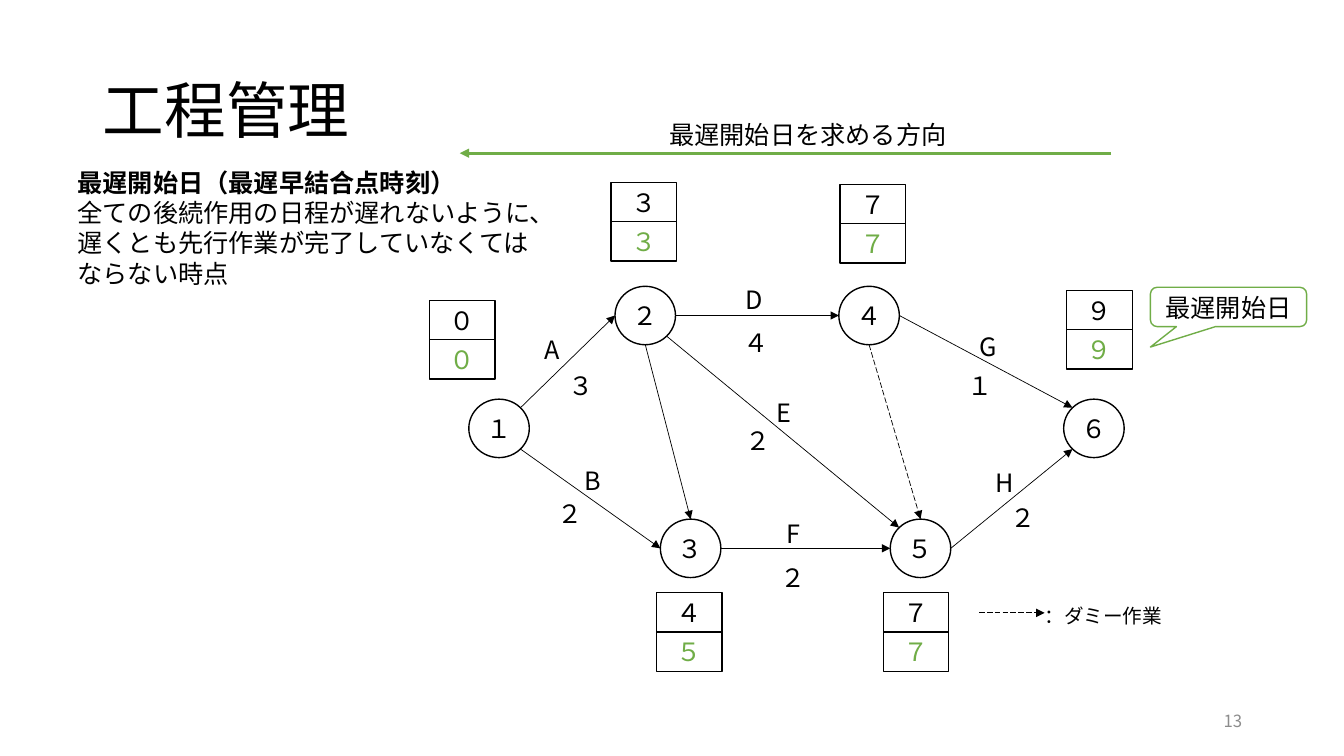
from lxml.etree import SubElement
from pptx import Presentation
from pptx.dml.color import RGBColor
from pptx.enum.dml import MSO_LINE
from pptx.enum.shapes import MSO_CONNECTOR, MSO_SHAPE
from pptx.enum.text import MSO_ANCHOR, PP_ALIGN
from pptx.oxml.ns import qn
from pptx.util import Pt

PX = 9144  # 100 px to the inch
THEME = {
    "black": RGBColor(0x00, 0x00, 0x00), "green": RGBColor(0x70, 0xAD, 0x47),
    "grey": RGBColor(0x8C, 0x8C, 0x8C),
    "font": "Noto Sans CJK JP", "latin": "Arial",
    "title": 44, "text": 18, "legend": 14, "number": 12,
}

prs = Presentation()
prs.slide_width, prs.slide_height = 1333 * PX, 750 * PX
s = prs.slides.add_slide(prs.slide_layouts[5])


def write(sp, text, size="text", color="black", align=PP_ALIGN.LEFT,
          anchor=MSO_ANCHOR.TOP, font="font"):
    tf = sp.text_frame
    tf.text = text
    tf.word_wrap = True
    tf.vertical_anchor = anchor
    for p in tf.paragraphs:
        p.alignment = align
        for r in p.runs:
            r.font.size = Pt(THEME[size])
            r.font.color.rgb = THEME[color]
            r.font.name = THEME[font]
            SubElement(r._r.get_or_add_rPr(), qn("a:ea"), typeface=THEME["font"])
    return tf


def arrow(start, end, color="black", width=0.5, dashed=False):
    c = s.shapes.add_connector(MSO_CONNECTOR.STRAIGHT,
                               *(round(v * PX) for v in (*start, *end)))
    c.line.color.rgb = THEME[color]
    c.line.width = Pt(width)
    if dashed:
        c.line.dash_style = MSO_LINE.LONG_DASH
    SubElement(c.line._get_or_add_ln(), qn("a:tailEnd"), type="triangle")
    SubElement(c._element.spPr, qn("a:effectLst"))
    return c


# Title
title = s.shapes.title
title.left, title.top, title.width, title.height = (v * PX for v in (92, 40, 1150, 145))
tf = write(title, "工程管理", "title", anchor=MSO_ANCHOR.MIDDLE)
tf.paragraphs[0].line_spacing = 0.9

# Explanation
sp = s.shapes.add_textbox(67 * PX, 161 * PX, 1199 * PX, 192 * PX)
tf = write(sp, "最遅開始日（最遅早結合点時刻）\n全ての後続作用の日程が遅れないように、\n"
               "遅くとも先行作業が完了していなくては\nならない時点", font="latin")
tf.paragraphs[0].runs[0].font.bold = True

# Slide number
sp = s.shapes.add_textbox(942 * PX, 695 * PX, 300 * PX, 40 * PX)
write(sp, "13", "number", "grey", PP_ALIGN.RIGHT, MSO_ANCHOR.MIDDLE)

# Outlined shapes: nodes, two-row day boxes and the callout
NODE_W, NODE_H, BOX_W, BOX_H = 60, 58, 65, 39
nodes = {"１": (465, 396), "２": (610, 284), "３": (655, 515),
         "４": (832, 284), "５": (883, 515), "６": (1055, 396)}
days = [(606, 181, "３", "３"), (426, 298, "０", "０"), (651, 588, "４", "５"),
        (876, 588, "７", "７"), (833, 183, "７", "７"), (1058, 288, "９", "９")]
outlined = [(MSO_SHAPE.FLOWCHART_CONNECTOR, x, y, NODE_W, NODE_H, name, "black", "black")
            for name, (x, y) in nodes.items()]
for x, y, earliest, latest in days:
    outlined += [(MSO_SHAPE.RECTANGLE, x, y, BOX_W, BOX_H, earliest, "black", "black"),
                 (MSO_SHAPE.RECTANGLE, x, y + BOX_H, BOX_W, BOX_H, latest, "green", "black")]
outlined.append((MSO_SHAPE.ROUNDED_RECTANGULAR_CALLOUT, 1141, 285, 155, 39,
                 "最遅開始日", "black", "green"))
node_shapes = {}
for kind, x, y, w, h, text, color, line in outlined:
    sp = s.shapes.add_shape(kind, x * PX, y * PX, w * PX, h * PX)
    sp.shadow.inherit = False
    sp.fill.background()
    sp.line.color.rgb = THEME[line]
    sp.line.width = Pt(1)
    tf = write(sp, text, "text", color, PP_ALIGN.CENTER, MSO_ANCHOR.MIDDLE)
    tf.margin_left = tf.margin_right = tf.margin_top = tf.margin_bottom = 0
    if kind == MSO_SHAPE.FLOWCHART_CONNECTOR:
        node_shapes[text] = sp
    elif kind == MSO_SHAPE.ROUNDED_RECTANGULAR_CALLOUT:
        for i, value in enumerate((-0.5, 1.02, 0.17)):
            sp.adjustments[i] = value

# Activities between points on the node outlines
DIAG = 0.71
sides = {"top": (0, -1), "bottom": (0, 1), "left": (-1, 0), "right": (1, 0),
         "upper left": (-DIAG, -DIAG), "upper right": (DIAG, -DIAG),
         "lower left": (-DIAG, DIAG), "lower right": (DIAG, DIAG)}
activities = [
    ("１", "upper right", "２", "left"), ("１", "lower right", "３", "left"),
    ("２", "bottom", "３", "top"), ("３", "right", "５", "left"),
    ("２", "lower right", "５", "upper left"), ("２", "right", "４", "left"),
    ("４", "bottom", "５", "top"), ("４", "right", "６", "upper left"),
    ("５", "right", "６", "lower left")]
for a, a_side, b, b_side in activities:
    ends = [(nodes[n][0] + NODE_W / 2 * (1 + sides[side][0]),
             nodes[n][1] + NODE_H / 2 * (1 + sides[side][1]))
            for n, side in ((a, a_side), (b, b_side))]
    c = arrow(*ends, dashed=(a, b) == ("４", "５"))
    if b_side == "top":
        c.end_connect(node_shapes[b], 0)

# Legend arrow and direction arrow
arrow((971, 608), (1036, 608), dashed=True)
arrow((1102, 152), (456, 152), "green", 2.25)

# Activity names, durations and captions
labels = [
    ("A", 530, 327, 37), ("３", 554, 362, 51), ("B", 570, 457, 37), ("２", 543, 489, 30),
    ("D", 730, 277, 51), ("４", 728, 320, 53), ("E", 760, 389, 45), ("２", 730, 417, 37),
    ("F", 770, 509, 53), ("２", 764, 553, 37), ("G", 962, 324, 50), ("１", 950, 362, 38),
    ("H", 978, 459, 41), ("２", 992, 493, 44), ("最遅開始日を求める方向", 654, 113, 303),
    ("：ダミー作業", 1026, 594, 139)]
for text, x, y, w in labels:
    size = "legend" if text.startswith("：") else "text"
    sp = s.shapes.add_textbox(x * PX, y * PX, w * PX, (34 if size == "legend" else 40) * PX)
    write(sp, text, size)

prs.save("out.pptx")
